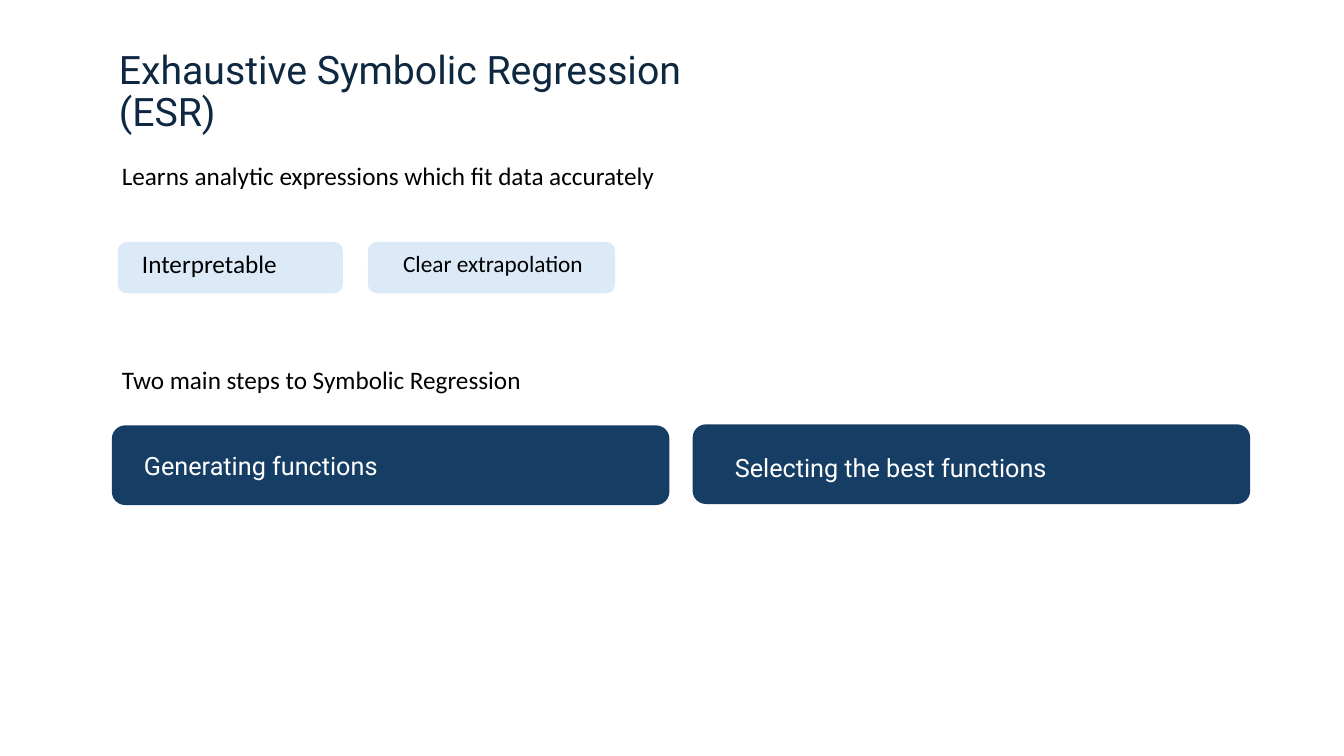
from pptx import Presentation
from pptx.dml.color import RGBColor
from pptx.enum.shapes import MSO_SHAPE
from pptx.enum.text import MSO_ANCHOR, PP_ALIGN
from pptx.util import Inches, Pt

COLORS = {"navy": "163E64", "pale": "DCEAF7", "title": "0E2841",
          "black": "000000", "white": "FFFFFF"}

prs = Presentation()
prs.slide_width, prs.slide_height = Inches(13.33), Inches(7.5)
slide = prs.slides.add_slide(prs.slide_layouts[5])


def write(sp, text, size=18, font="Calibri", color="black",
          anchor=MSO_ANCHOR.TOP, line=1.0, before=0):
    tf = sp.text_frame
    tf.word_wrap = True
    tf.vertical_anchor = anchor
    p = tf.paragraphs[0]
    p.alignment = PP_ALIGN.LEFT
    p.line_spacing = line
    p.space_before = Pt(before)
    r = p.add_run()
    r.text = text
    r.font.size = Pt(size)
    r.font.name = font
    r.font.color.rgb = RGBColor.from_string(COLORS[color])


title = slide.shapes.title
title.left, title.top = Inches(1.08), Inches(0.53)
title.width, title.height = Inches(6.54), Inches(0.78)
write(title, "Exhaustive Symbolic Regression (ESR)", size=28, font="Roboto",
      color="title", anchor=MSO_ANCHOR.MIDDLE, line=0.9)

panels = [
    (1.11, 4.22, 5.53, 0.79, "navy"),
    (6.87, 4.21, 5.53, 0.79, "navy"),
    (1.17, 2.4, 2.23, 0.51, "pale"),
    (3.65, 2.4, 2.45, 0.51, "pale"),
]
for left, top, width, height, fill in panels:
    sp = slide.shapes.add_shape(MSO_SHAPE.ROUNDED_RECTANGLE, Inches(left),
                                Inches(top), Inches(width), Inches(height))
    sp.shadow.inherit = False
    sp.fill.solid()
    sp.fill.fore_color.rgb = RGBColor.from_string(COLORS[fill])
    sp.line.fill.background()

benefit = {"line": 0.9, "before": 10}
step = {"font": "Roboto", "color": "white"}
labels = [
    (1.11, 1.54, 6.81, 0.4, "Learns analytic expressions which fit data accurately", {}),
    (1.31, 2.45, 2.08, 0.46, "Interpretable", benefit),
    (3.9, 2.46, 2.08, 0.46, "Clear extrapolation", {**benefit, "size": 16.6}),
    (1.11, 3.57, 6.81, 0.4, "Two main steps to Symbolic Regression", {}),
    (1.33, 4.42, 3.73, 0.4, "Generating functions", step),
    (7.19, 4.44, 4.18, 0.4, "Selecting the best functions", step),
]
for left, top, width, height, text, style in labels:
    sp = slide.shapes.add_textbox(Inches(left), Inches(top),
                                  Inches(width), Inches(height))
    write(sp, text, **style)

prs.save("out.pptx")
